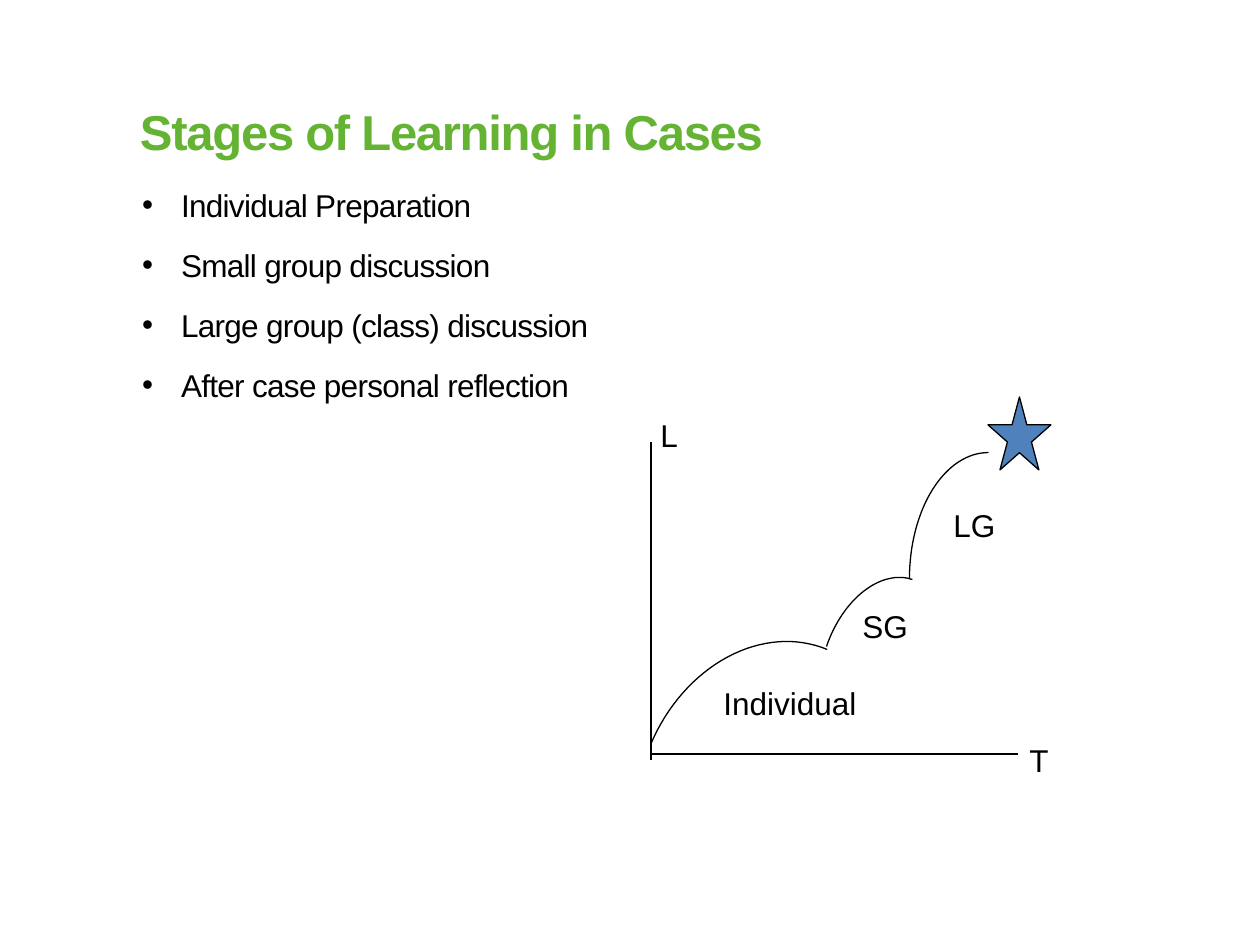
import math

import lxml.etree
import pptx
import pptx.dml.color
import pptx.enum.shapes
import pptx.enum.text
import pptx.oxml.ns
import pptx.util

PX = 914400 / 126
COLORS = {"title": "65B333", "text": "000000", "line": "000000", "star": "4F81BD"}
FONT = "Arial"
ARC_STEPS = 32


def emu(px):
    return pptx.util.Emu(round(px * PX))


def rgb(name):
    return pptx.dml.color.RGBColor.from_string(COLORS[name])


def add_text(p, text, size=18, color="text", bold=False, spacing=0):
    """Add a formatted run; spacing is in hundredths of a point."""
    r = p.add_run()
    r.text = text
    r.font.name = FONT
    r.font.size = pptx.util.Pt(size)
    r.font.bold = bold
    r.font.color.rgb = rgb(color)
    if spacing:
        r._r.get_or_add_rPr().set("spc", str(spacing))


class SlideBuilder:
    def __init__(self, slide, line_width=0.75):
        self.slide = slide
        self.shapes = slide.shapes
        self.line_width = pptx.util.Pt(line_width)

    def outline(self, sp):
        sp.line.color.rgb = rgb("line")
        sp.line.width = self.line_width

    def placeholder(self, index, x, y, w, h):
        sp = self.slide.placeholders[index]
        sp.left, sp.top, sp.width, sp.height = map(emu, (x, y, w, h))
        tf = sp.text_frame
        tf.margin_left = tf.margin_top = tf.margin_right = tf.margin_bottom = 0
        tf.vertical_anchor = pptx.enum.text.MSO_ANCHOR.TOP
        tf.auto_size = pptx.enum.text.MSO_AUTO_SIZE.NONE
        tf.word_wrap = True
        return tf

    def title(self, text, *box):
        p = self.placeholder(0, *box).paragraphs[0]
        p.alignment = pptx.enum.text.PP_ALIGN.LEFT
        add_text(p, text, size=28, color="title", bold=True, spacing=-70)

    def bullets(self, items, *box, indent=39):
        tf = self.placeholder(1, *box)
        for i, item in enumerate(items):
            p = tf.add_paragraph() if i else tf.paragraphs[0]
            pPr = p._p.get_or_add_pPr()
            pPr.set("marL", str(emu(indent)))
            pPr.set("indent", str(-emu(indent)))
            bullet = lxml.etree.SubElement(pPr, pptx.oxml.ns.qn("a:buChar"))
            bullet.set("char", "•")
            p.line_spacing = pptx.util.Pt(22.2)
            p.space_before = pptx.util.Pt(6 if i else 0)
            p.space_after = pptx.util.Pt(6)
            add_text(p, item, spacing=-40)

    def label(self, text, x, y, w, h=50):
        tf = self.shapes.add_textbox(*map(emu, (x, y, w, h))).text_frame
        tf.word_wrap = False
        tf.auto_size = pptx.enum.text.MSO_AUTO_SIZE.SHAPE_TO_FIT_TEXT
        add_text(tf.paragraphs[0], text)

    def axis(self, x1, y1, x2, y2):
        kind = pptx.enum.shapes.MSO_CONNECTOR.STRAIGHT
        sp = self.shapes.add_connector(kind, *map(emu, (x1, y1, x2, y2)))
        self.outline(sp)
        lxml.etree.SubElement(sp._element.spPr, pptx.oxml.ns.qn("a:effectLst"))

    def arc(self, x, y, w, h, rotation):
        """Draw a quarter ellipse across the box, then rotate it."""
        angles = [math.pi / 2 * i / ARC_STEPS for i in range(ARC_STEPS + 1)]
        points = [(emu(x + w * math.sin(a)), emu(y + h * (1 - math.cos(a))))
                  for a in angles]
        builder = self.shapes.build_freeform(*points[0])
        builder.add_line_segments(points[1:], close=False)
        sp = builder.convert_to_shape()
        sp.rotation = rotation
        sp.shadow.inherit = False
        sp.fill.background()
        self.outline(sp)

    def star(self, *box):
        kind = pptx.enum.shapes.MSO_SHAPE.STAR_5_POINT
        sp = self.shapes.add_shape(kind, *map(emu, box))
        sp.shadow.inherit = False
        sp.fill.solid()
        sp.fill.fore_color.rgb = rgb("star")
        self.outline(sp)


def main():
    prs = pptx.Presentation()
    prs.slide_width, prs.slide_height = emu(1260), emu(945)
    s = SlideBuilder(prs.slides.add_slide(prs.slide_layouts[1]))

    # Title and list
    s.title("Stages of Learning in Cases", 140, 101, 1061, 53)
    s.bullets(["Individual Preparation", "Small group discussion",
               "Large group (class) discussion", "After case personal reflection"],
              142, 185, 822, 512)

    # Axes: learning over time
    s.axis(651, 442, 651, 760)
    s.axis(651, 754, 1018, 754)
    s.label("L", 648, 410, 43)
    s.label("T", 1017, 735, 45)

    # Learning curve, one arc per stage
    s.arc(661, 634, 156, 126, 292.8)
    s.arc(824, 583, 91, 60, 288.6)
    s.arc(886, 476, 126, 79, 270)
    s.label("Individual", 711, 678, 160)
    s.label("SG", 850, 601, 71)
    s.label("LG", 941, 500, 67)

    # Goal
    s.star(988, 397, 63, 73)

    prs.save("out.pptx")


if __name__ == "__main__":
    main()
